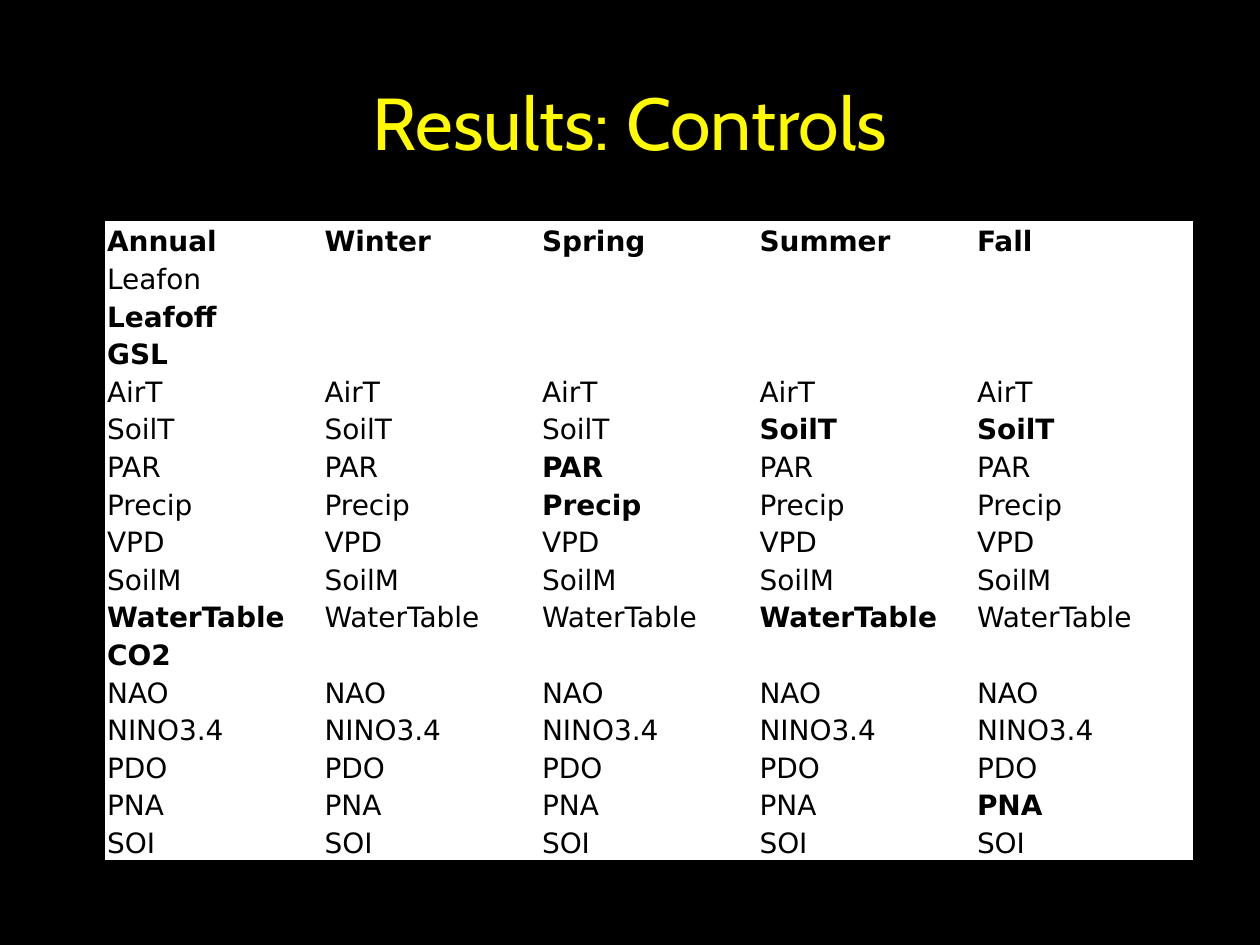
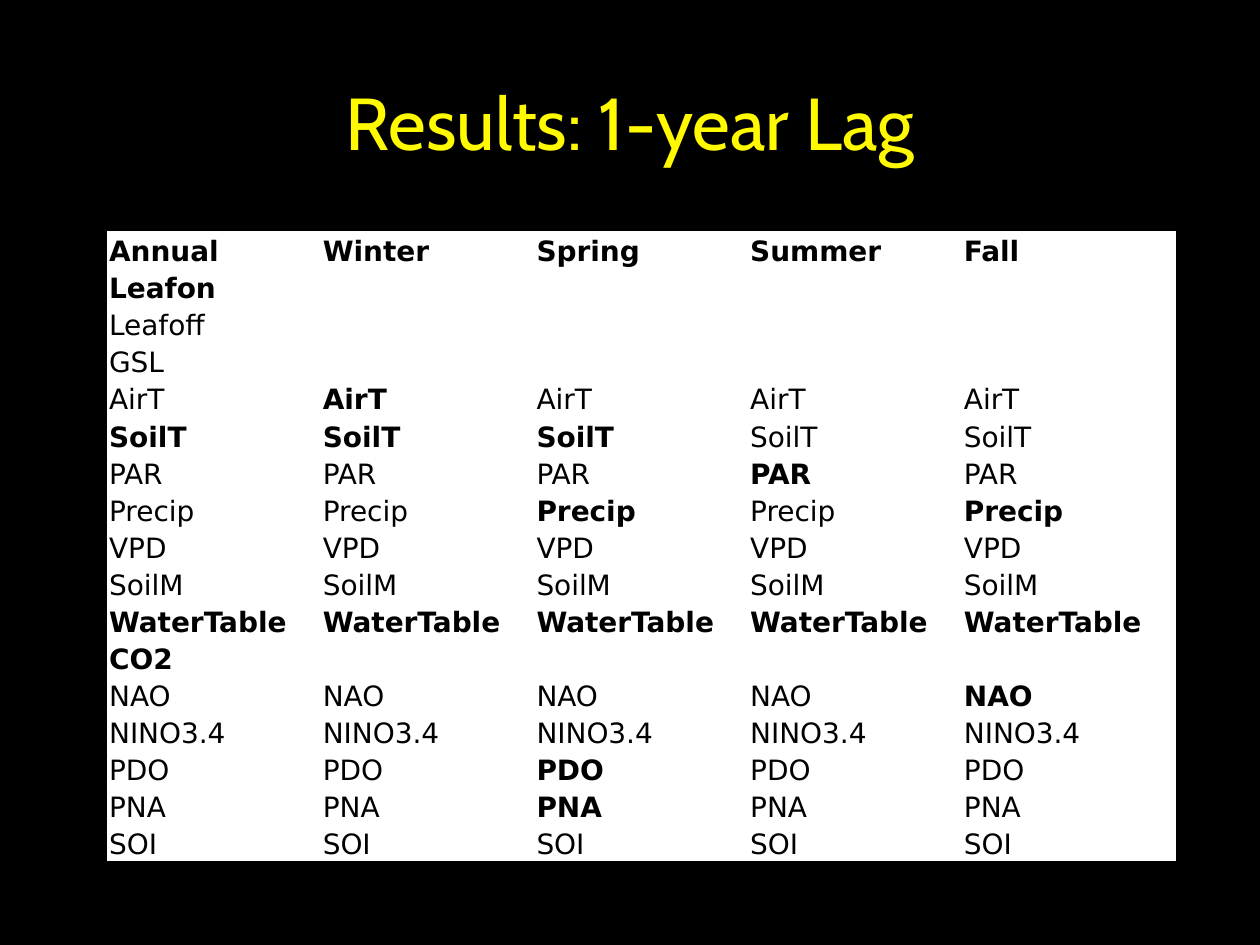
from pptx import Presentation
from pptx.dml.color import RGBColor
from pptx.enum.text import MSO_ANCHOR as Anchor, PP_ALIGN as Align
from pptx.util import Cm, Pt

COLORS = {"background": "000000", "title": "FFFA00", "cell": "FFFFFF", "text": "000000"}
TITLE_FONT, TABLE_FONT = "Cabin", "DejaVu Sans"
TITLE_SIZE, TABLE_SIZE = Pt(42), Pt(16)
NO_STYLE = "{2D5ABB26-0587-4C30-8999-92F81FD0307C}"

SEASONS = ["Annual", "Winter", "Spring", "Summer", "Fall"]
VARIABLES = ["Leafon", "Leafoff", "GSL", "AirT", "SoilT", "PAR", "Precip", "VPD",
             "SoilM", "WaterTable", "CO2", "NAO", "NINO3.4", "PDO", "PNA", "SOI"]
ANNUAL_ONLY = {"Leafon", "Leafoff", "GSL", "CO2"}

# Variables set in bold, by season
CONTROLS = {
    "Annual": {"Leafoff", "GSL", "WaterTable", "CO2"},
    "Spring": {"PAR", "Precip"},
    "Summer": {"SoilT", "WaterTable"},
    "Fall": {"SoilT", "PNA"},
}
LAG_CONTROLS = {
    "Annual": {"Leafon", "SoilT", "WaterTable", "CO2"},
    "Winter": {"AirT", "SoilT", "WaterTable"},
    "Spring": {"SoilT", "Precip", "WaterTable", "PDO", "PNA"},
    "Summer": {"PAR", "WaterTable"},
    "Fall": {"Precip", "WaterTable", "NAO"},
}


def color(name):
    return RGBColor.from_string(COLORS[name])


def add_run(paragraph, text, font_name, size, color_name, bold=False):
    run = paragraph.add_run()
    run.text = text
    run.font.name = font_name
    run.font.size = size
    run.font.bold = bold
    run.font.color.rgb = color(color_name)


def add_titled_slide(presentation, title):
    slide = presentation.slides.add_slide(presentation.slide_layouts[6])
    slide.background.fill.solid()
    slide.background.fill.fore_color.rgb = color("background")
    frame = slide.shapes.add_textbox(Cm(1.9), Cm(0.85), Cm(21.6), Cm(3.18)).text_frame
    frame.word_wrap = True
    frame.vertical_anchor = Anchor.MIDDLE
    paragraph = frame.paragraphs[0]
    paragraph.alignment = Align.CENTER
    add_run(paragraph, title, TITLE_FONT, TITLE_SIZE, "title")
    return slide


def fill_cell(cell, text, bold):
    cell.fill.solid()
    cell.fill.fore_color.rgb = color("cell")
    cell.vertical_anchor = Anchor.BOTTOM
    cell.margin_left = cell.margin_right = cell.margin_top = Cm(0.04)
    cell.margin_bottom = 0
    paragraph = cell.text_frame.paragraphs[0]
    if text:
        add_run(paragraph, text, TABLE_FONT, TABLE_SIZE, "text", bold)
    else:
        # Keeps an empty cell from stretching its row
        paragraph._p.get_or_add_endParaRPr().set("sz", str(TABLE_SIZE.centipoints))


def add_season_table(slide, left, top, width, height, bold_variables):
    """Add one column per season, listing its variables with the given ones in bold."""
    table = slide.shapes.add_table(len(VARIABLES) + 1, len(SEASONS),
                                   left, top, width, height).table
    table.first_row = table.horz_banding = False
    table._tbl.tblPr[0].text = NO_STYLE
    for column, season in enumerate(SEASONS):
        fill_cell(table.cell(0, column), season, True)
        for row, variable in enumerate(VARIABLES, start=1):
            shown = season == "Annual" or variable not in ANNUAL_ONLY
            fill_cell(table.cell(row, column), variable if shown else "",
                      variable in bold_variables.get(season, ()))


def main():
    presentation = Presentation()
    presentation.slide_width, presentation.slide_height = Cm(25.4), Cm(19.05)

    slide = add_titled_slide(presentation, "Results: Controls")
    add_season_table(slide, Cm(2.12), Cm(4.45), Cm(21.92), Cm(12.9), CONTROLS)

    slide = add_titled_slide(presentation, "Results: 1-year Lag")
    add_season_table(slide, Cm(2.16), Cm(4.66), Cm(21.54), Cm(12.7), LAG_CONTROLS)

    presentation.save("out.pptx")


if __name__ == "__main__":
    main()
